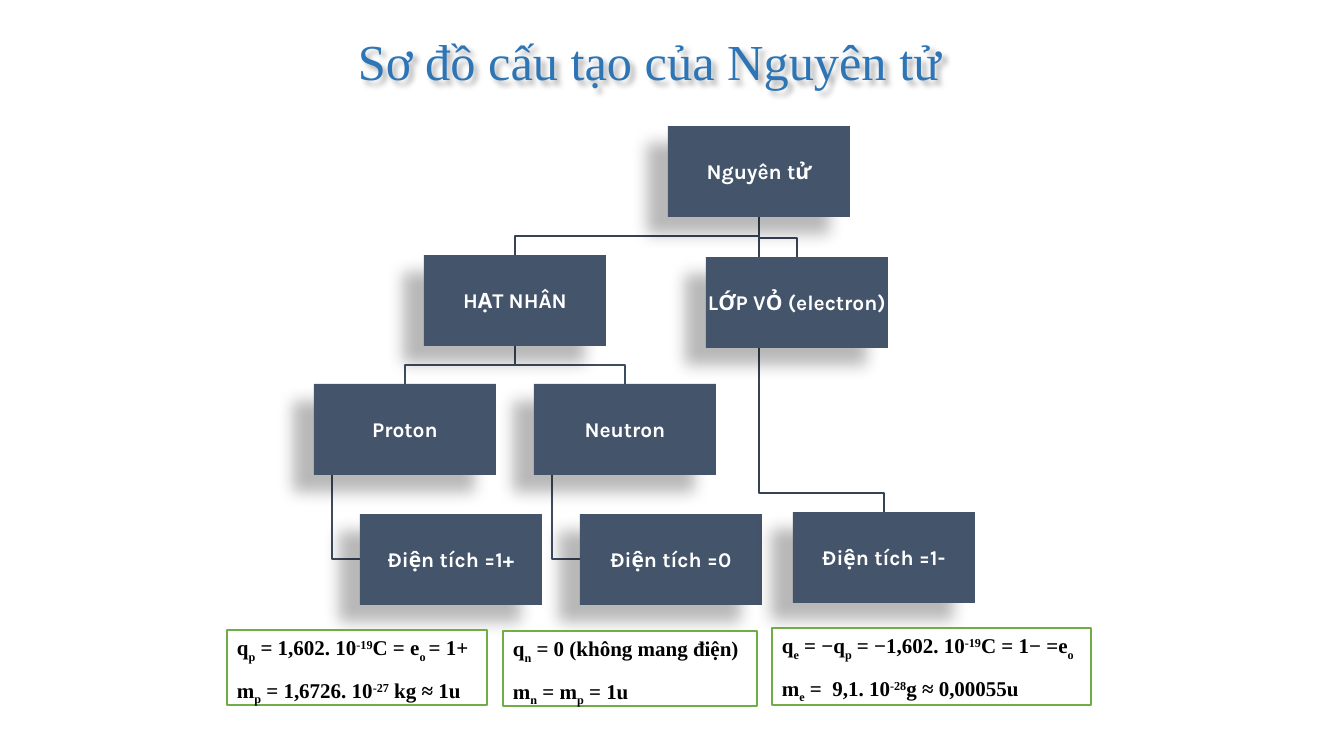
from lxml import etree
from pptx import Presentation
from pptx import util as u
from pptx.dml.color import RGBColor
from pptx.enum import shapes, text
from pptx.oxml import parse_xml
from pptx.oxml.ns import nsdecls

PX = u.Inches(1) / 100.8
SLATE = RGBColor(0x44, 0x54, 0x6A)
DARK = RGBColor(0x36, 0x43, 0x55)
DIM = RGBColor(0x3E, 0x4C, 0x60)
BLUE = RGBColor(0x2E, 0x75, 0xB6)
GREEN = RGBColor(0x70, 0xAD, 0x47)
WHITE = RGBColor(0xFF, 0xFF, 0xFF)
BLACK = RGBColor(0, 0, 0)
SERIF = "Times New Roman"


def px(*vals):
    return [round(v * PX) for v in vals]


def shade(shape, blur, dist, angle, alpha):
    shape.shadow.inherit = False
    shape._element.spPr.remove(shape._element.spPr.find("{*}effectLst"))
    shape._element.spPr.append(parse_xml(
        f'<a:effectLst {nsdecls("a")}><a:outerShdw blurRad="{u.Pt(blur)}" '
        f'dist="{u.Pt(dist)}" dir="{angle * 60000}" algn="ctr" rotWithShape="0">'
        f'<a:srgbClr val="000000"><a:alpha val="{alpha * 1000}"/></a:srgbClr>'
        '</a:outerShdw></a:effectLst>'))


prs = Presentation()
prs.slide_width, prs.slide_height = px(1344, 756)
slide = prs.slides.add_slide(prs.slide_layouts[6])
draw = slide.shapes

# Tree nodes: left, top, label
WIDE, HIGH = 182, 91
nodes = {
    "atom": (668, 126, "Nguyên tử"),
    "core": (424, 255, "HẠT NHÂN"),
    "proton": (314, 384, "Proton"),
    "plus": (360, 514, "Điện tích =1+"),
    "neutron": (534, 384, "Neutron"),
    "zero": (580, 514, "Điện tích =0"),
    "shell": (706, 257, "LỚP VỎ (electron)"),
    "minus": (793, 512, "Điện tích =1-"),
}

# Branches, behind the nodes: leaves hang from the side, the rest from the middle
links = [("atom", "minus"), ("atom", "shell"), ("neutron", "zero"),
         ("core", "neutron"), ("proton", "plus"), ("core", "proton"),
         ("atom", "core")]
for start, end in links:
    left, top, _ = nodes[start]
    x, y, _ = nodes[end]
    base = top + HIGH
    if start in ("proton", "neutron"):
        first = left + 18
        bends = [(first, y + 45), (x, y + 45)]
    else:
        first = left + WIDE // 2
        mid = x + WIDE // 2
        bends = [(first, y - 19), (mid, y - 19), (mid, y)]
    pen = draw.build_freeform(first, base, scale=PX)
    pen.add_line_segments(bends, close=False)
    branch = pen.convert_to_shape()
    branch.fill.background()
    branch.line.color.rgb = DARK if start == "atom" else DIM
    branch.line.width = u.Pt(1)
    branch.shadow.inherit = False

# Node boxes
for left, top, label in nodes.values():
    box = draw.add_shape(shapes.MSO_SHAPE.RECTANGLE, *px(left, top, WIDE, HIGH))
    box.fill.solid()
    box.fill.fore_color.rgb = SLATE
    box.line.fill.background()
    shade(box, 11.8, 19.7, 141, 28)
    frame = box.text_frame
    frame.text = label
    frame.word_wrap = False
    frame.vertical_anchor = text.MSO_ANCHOR.MIDDLE
    frame.margin_left = frame.margin_right = round(PX)
    frame.margin_top = frame.margin_bottom = round(PX)
    para = frame.paragraphs[0]
    para.alignment = text.PP_ALIGN.CENTER
    font = para.runs[0].font
    font.name, font.size, font.bold = "Karla", u.Pt(15), True
    font.color.rgb = WHITE

# Title
title = draw.add_textbox(*px(294, 25, 711, 72))
shade(title, 4, 4, 45, 30)
frame = title.text_frame
frame.text = "Sơ đồ cấu tạo của Nguyên tử"
frame.word_wrap = False
frame.paragraphs[0].alignment = text.PP_ALIGN.CENTER
font = frame.paragraphs[0].runs[0].font
font.name, font.size = SERIF, u.Pt(36)
font.color.rgb = BLUE

# Charge and mass notes: | parts the runs, _ lowers one, ^ raises one
notes = [
    (227, 630, 260, 75, "q|_p| = 1,602. 10|^-19|C = e|_o |= 1+",
     "m|_p| = 1,6726. 10|^-27| kg ≈ 1u"),
    (503, 631, 254, 75, "q|_n| = 0 (không mang điện)",
     "m|_n| = m|_p| = 1u"),
    (772, 628, 319, 77, "q|_e| = −q|_p| = −1,602. 10|^-19|C = 1− =e|_o ",
     "m|_e| =  9,1. 10|^-28|g ≈ 0,00055u"),
]
shift = {"_": "-25000", "^": "30000"}
for left, top, wide, high, *lines in notes:
    note = draw.add_shape(shapes.MSO_SHAPE.RECTANGLE, *px(left, top, wide, high))
    note.fill.solid()
    note.fill.fore_color.rgb = WHITE
    note.line.color.rgb = GREEN
    note.line.width = u.Pt(1)
    note.shadow.inherit = False
    frame = note.text_frame
    frame.word_wrap = True
    frame.vertical_anchor = text.MSO_ANCHOR.TOP
    frame.text = "\n".join(lines)
    for para, line in zip(frame.paragraphs, lines):
        para.text = ""
        para.alignment = text.PP_ALIGN.LEFT
        para.space_after = u.Pt(10)
        for part in line.split("|"):
            run = para.add_run()
            run.text = part.lstrip("_^")
            font = run.font
            font.name, font.size, font.bold = SERIF, u.Pt(15), True
            font.color.rgb = BLACK
            if part[0] in shift:
                run._r.get_or_add_rPr().set("baseline", shift[part[0]])

prs.save("out.pptx")
